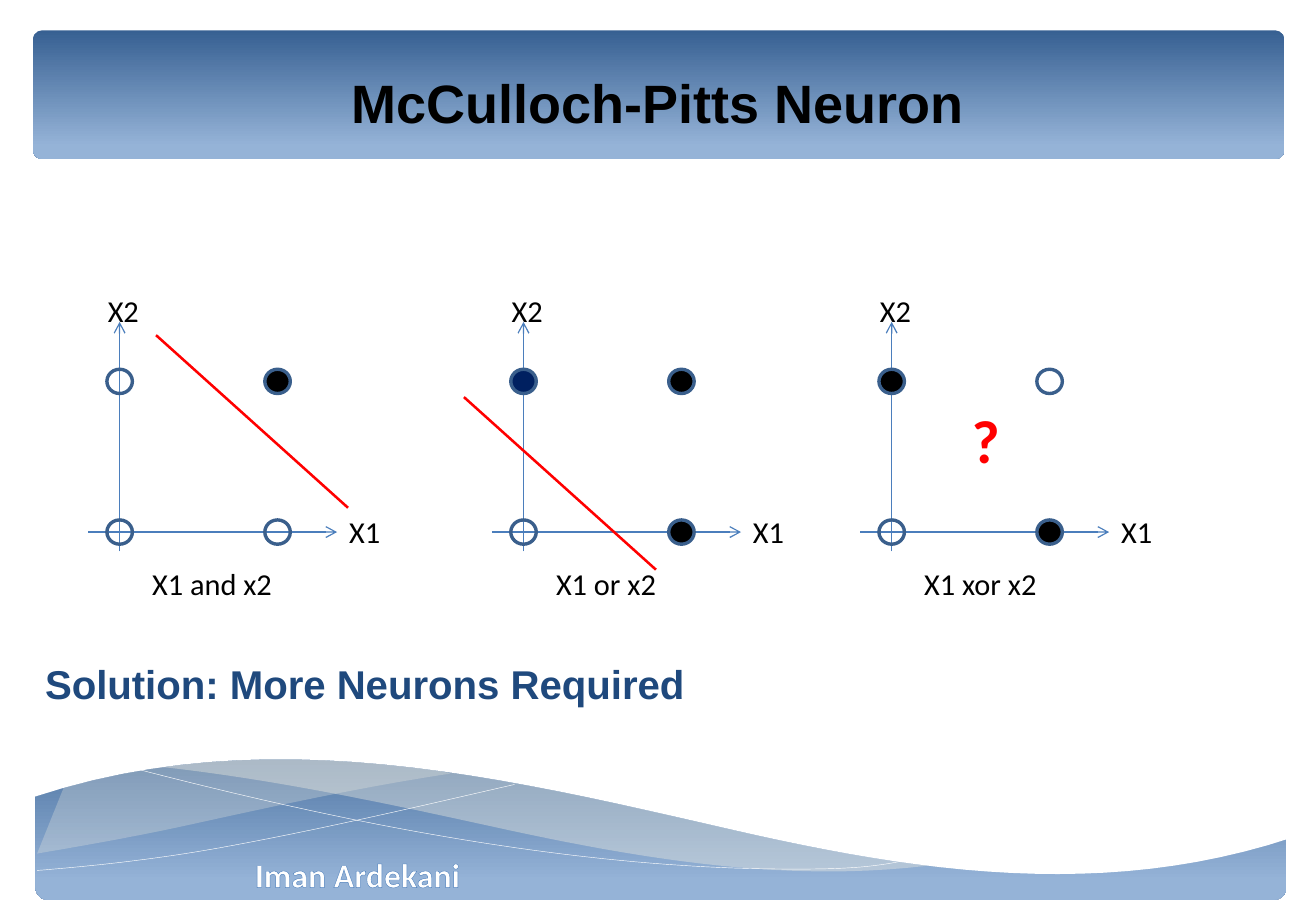
from dataclasses import dataclass
from itertools import pairwise, product

from lxml import etree
from pptx import Presentation
from pptx.dml.color import RGBColor
from pptx.enum.shapes import MSO_CONNECTOR, MSO_SHAPE
from pptx.enum.text import MSO_ANCHOR, MSO_AUTO_SIZE, PP_ALIGN
from pptx.oxml.ns import qn
from pptx.util import Pt

LINE = MSO_CONNECTOR.STRAIGHT
OVAL = MSO_SHAPE.OVAL
ROUND = MSO_SHAPE.ROUNDED_RECTANGLE
MIDDLE = MSO_ANCHOR.MIDDLE
NO_FIT = MSO_AUTO_SIZE.NONE
CENTER = PP_ALIGN.CENTER


@dataclass(frozen=True)
class Theme:
    head: str = "Arial"
    body: str = "Calibri"
    black: str = "000000"
    white: str = "FFFFFF"
    navy: str = "002060"
    deep: str = "376092"
    pale: str = "95B3D7"
    cream: str = "EEECE1"
    axis: str = "4B7EBC"
    ring: str = "3A5F8C"
    red: str = "FF0000"
    blue: str = "1F497D"
    edge: str = "4F81BD"
    title: float = 32
    note: float = 23.8
    name: float = 20
    label: float = 18
    mark: float = 36


theme = Theme()
rgb = RGBColor.from_string

deck = Presentation()
deck.slide_width, deck.slide_height = Pt(780), Pt(540)
slide = deck.slides.add_slide(deck.slide_layouts[5])
shapes = slide.shapes


def label(text, left, top, width, height, size, color=theme.black, bold=False, face=theme.body):
    box = shapes.add_textbox(Pt(left), Pt(top), Pt(width), Pt(height))
    box.text_frame.word_wrap = False
    para = box.text_frame.paragraphs[0]
    para.text = text
    para.font.name, para.font.size, para.font.bold = face, Pt(size), bold
    para.font.color.rgb = rgb(color)
    return para


def curve(*knots, steps=24):
    points = [knots[0][:2]]
    for (x1, y1, slope1), (x2, y2, slope2) in pairwise(knots):
        run = x2 - x1
        for step in range(1, steps + 1):
            t = step / steps
            ease = t * t * (3 - 2 * t)
            bend = t * (1 - t) * (slope1 * (1 - t) - slope2 * t)
            points.append((x1 + run * t, y1 + (y2 - y1) * ease + run * bend))
    return points


title = shapes.title
title.left, title.top, title.width, title.height = Pt(38.9), Pt(26.6), Pt(702), Pt(67.7)
frame = title.text_frame
frame.word_wrap, frame.auto_size, frame.vertical_anchor = True, NO_FIT, MIDDLE
para = frame.paragraphs[0]
para.text = "McCulloch-Pitts Neuron"
para.alignment = CENTER
para.font.name, para.font.size, para.font.bold = theme.head, Pt(theme.title), True
para.font.color.rgb = rgb(theme.black)

for left, top, height in [(19.6, 18, 76.3), (21, 421.2, 112.3)]:
    band = shapes.add_shape(ROUND, Pt(left), Pt(top), Pt(741.6), Pt(height))
    band.adjustments[0] = 0.07
    band.shadow.inherit = False
    band.line.fill.background()
    band.fill.gradient()
    band.fill.gradient_angle = 270
    for stop, color, place in zip(band.fill.gradient_stops, (theme.deep, theme.pale), (0, 0.9)):
        stop.color.rgb = rgb(color)
        stop.position = place
    title._element.addprevious(band._element)

swell = curve((20.5, 472.3, -0.33), (434, 491.8, 0.23), (765, 496.8, -0.33))
rise = curve((22, 506, -0.17), (112, 489, -0.22), (267, 458.6, -0.15))
fall = curve((86, 453.6, 0.1), (292, 490, 0.22), (559, 512, -0.14))
long = curve((75, 454.3, 0.26), (264, 496, 0.17), (470, 515.2, 0), (541, 509, -0.25))
short = curve((22, 516, -0.08), (130, 502.6, -0.18), (305, 465, -0.23))

layers = []
for veil, alpha in [(rise, 29), (fall, 40)]:
    start, end = veil[0][0], veil[-1][0]
    crest = [(x, y) for x, y in swell if start <= x <= end]
    layers.append((veil + crest[::-1], theme.cream, alpha))
layers += [(long, None, 100), (short, None, 100)]
layers.append((swell + [(765, 412.5), (20.5, 412.5)], theme.white, 100))

for points, color, alpha in layers:
    spots = [(Pt(x), Pt(y)) for x, y in points]
    pen = shapes.build_freeform(*spots[0], scale=1.0)
    pen.add_line_segments(spots[1:], close=bool(color))
    layer = pen.convert_to_shape()
    layer.shadow.inherit = False
    if color:
        layer.line.fill.background()
        layer.fill.solid()
        layer.fill.fore_color.rgb = rgb(color)
        tint = layer._element.spPr.find(".//" + qn("a:srgbClr"))
        etree.SubElement(tint, qn("a:alpha"), val=str(alpha * 1000))
    else:
        layer.fill.background()
        layer.line.color.rgb = rgb(theme.white)
        layer.line.width = Pt(0.25)

name = label("Iman Ardekani", 144, 502.6, 153.4, 31.7, theme.name, theme.white, True)
rim = etree.SubElement(name.runs[0]._r.get_or_add_rPr(), qn("a:ln"), w=str(Pt(0.8)))
etree.SubElement(etree.SubElement(rim, qn("a:solidFill")), qn("a:srgbClr"), val=theme.edge)

label("Solution: More Neurons Required", 19.6, 387.3, 400, 34.6, theme.note, theme.blue, True, theme.head)

base = 315.4
across, up = 93.6, 89.3
wide, tall = 15.1, 14.4
reach = 128.9
split_run, split_drop = 113.8, 102.3
plots = [
    (70.9, "X1 and x2", 86.4, lambda a, b: a and b, theme.black, (21.6, 198.7)),
    (310.3, "X1 or x2", 74.2, lambda a, b: a or b, theme.navy, (-35.3, 235.4)),
    (528.5, "X1 xor x2", 82.1, lambda a, b: a != b, theme.black, None),
]
for left, text, width, gate, accent, split in plots:
    rules = [
        (0, 326.9, 0, 190.8, theme.axis, 0.75),
        (-18.7, base, reach, base, theme.axis, 0.75),
    ]
    if split:
        x, y = split
        rules.append((x, y, x + split_run, y + split_drop, theme.red, 1.5))
    for x1, y1, x2, y2, color, weight in rules:
        rule = shapes.add_connector(LINE, Pt(left + x1), Pt(y1), Pt(left + x2), Pt(y2))
        rule.line.color.rgb = rgb(color)
        rule.line.width = Pt(weight)
        if color == theme.axis:
            etree.SubElement(rule.line._get_or_add_ln(), qn("a:tailEnd"), type="arrow")
        etree.SubElement(rule._element.spPr, qn("a:effectLst"))

    for a, b in product((0, 1), repeat=2):
        x, y = left + a * across, base - b * up
        dot = shapes.add_shape(OVAL, Pt(x - wide / 2), Pt(y - tall / 2), Pt(wide), Pt(tall))
        dot.shadow.inherit = False
        dot.line.color.rgb = rgb(theme.ring)
        dot.line.width = Pt(2)
        if gate(a, b):
            dot.fill.solid()
            dot.fill.fore_color.rgb = rgb(theme.black if a else accent)
        else:
            dot.fill.background()

    label("X2", left - 14.1, 169.9, 33.1, 28.8, theme.label)
    label("X1", left + reach, 300.5, 33.1, 28.8, theme.label)
    label(text, left + 12.2, 331.4, width, 28.8, theme.label)

label("?", 568.8, 235.4, 31.7, 51.1, theme.mark, theme.red, True)

deck.save("out.pptx")
